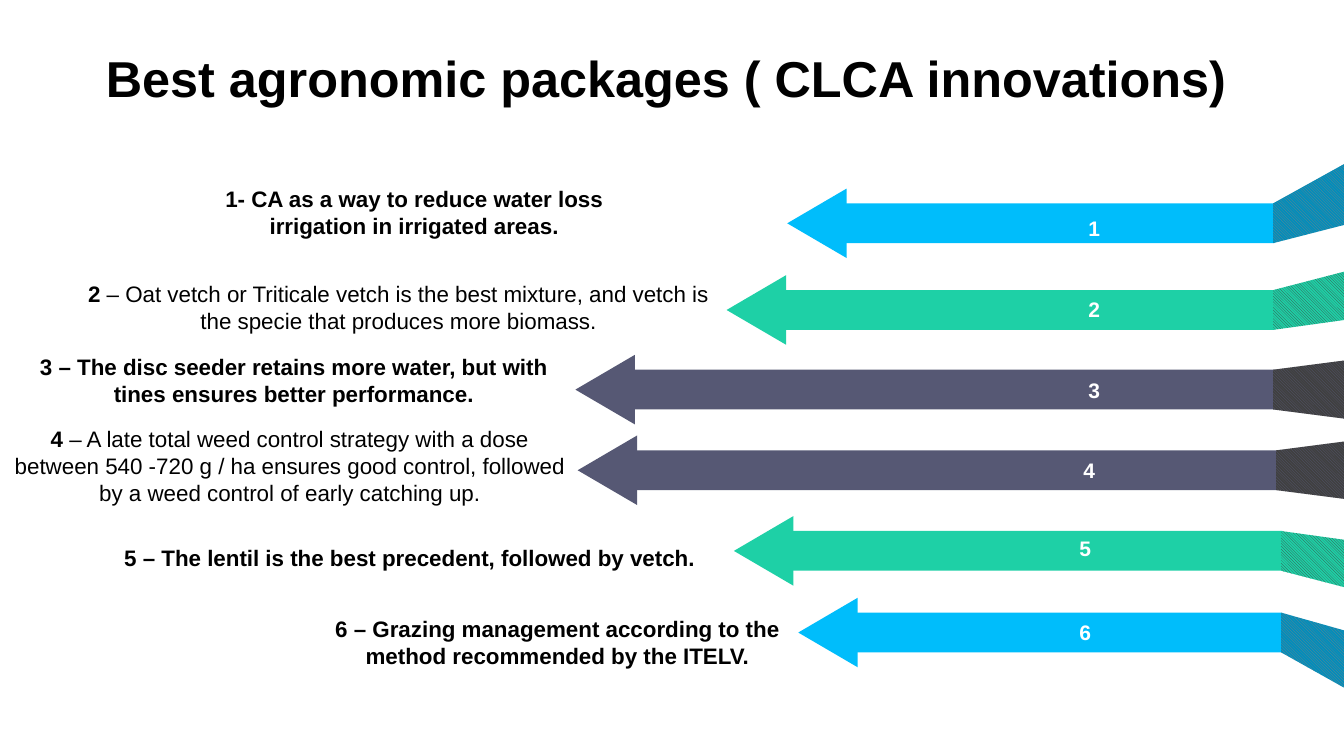
from pptx import Presentation
from pptx.dml.color import RGBColor
from pptx.enum.dml import MSO_PATTERN
from pptx.enum.shapes import MSO_SHAPE
from pptx.enum.text import MSO_ANCHOR, PP_ALIGN
from pptx.util import Pt

BLACK = RGBColor(0x00, 0x00, 0x00)
WHITE = RGBColor(0xFF, 0xFF, 0xFF)
BLUE = RGBColor(0x00, 0xBD, 0xFB)
DARK_BLUE = RGBColor(0x00, 0x8E, 0xBC)
GREEN = RGBColor(0x1E, 0xD0, 0xA6)
SLATE = RGBColor(0x56, 0x58, 0x74)
CHARCOAL = RGBColor(0x40, 0x40, 0x40)
GREY = RGBColor(0x80, 0x80, 0x80)

BAR_H = 28.4
HEAD_W, HEAD_H = 42.5, 49.7
TAIL_W = 110.2

prs = Presentation()
prs.slide_width, prs.slide_height = Pt(960), Pt(540)
s = prs.slides.add_slide(prs.slide_layouts[6])


def paint(sp, color, back=None):
    sp.shadow.inherit = False
    sp.line.fill.background()
    if back is None:
        sp.fill.solid()
        sp.fill.fore_color.rgb = color
    else:
        sp.fill.patterned()
        sp.fill.pattern = MSO_PATTERN.DARK_DOWNWARD_DIAGONAL
        sp.fill.fore_color.rgb = color
        sp.fill.back_color.rgb = back


def add_text(box, paragraphs, size, color, pad_x=9.6, pad_y=4.8):
    """Each paragraph is a list of (text, bold) runs."""
    tf = s.shapes.add_textbox(*map(Pt, box)).text_frame
    tf.word_wrap = True
    tf.margin_left = tf.margin_right = Pt(pad_x)
    tf.margin_top = tf.margin_bottom = Pt(pad_y)
    for i, runs in enumerate(paragraphs):
        p = tf.paragraphs[0] if i == 0 else tf.add_paragraph()
        p.alignment = PP_ALIGN.CENTER
        p.font.name, p.font.size = "Arial", Pt(size)
        p.font.color.rgb = color
        for text, bold in runs:
            r = p.add_run()
            r.text, r.font.bold = text, bold
    return tf


# Arrows: tip x, middle y, fold x, far top and bottom of the tail,
# bar colour, tail pattern colours, left and top of the number
arrows = [
    (562.3, 159.5, 909.4, 84.2, 145.4, BLUE, GREY, DARK_BLUE, 716.4, 154),
    (519, 221.4, 909.4, 178.6, 220.3, GREEN, CHARCOAL, GREEN, 716.4, 211.7),
    (411, 278.3, 909.4, 249.8, 306.7, SLATE, SLATE, CHARCOAL, 716.4, 269.3),
    (412.6, 335.9, 911.5, 307.4, 364.3, SLATE, SLATE, CHARCOAL, 712.8, 326.9),
    (524.2, 393.5, 915.1, 394.6, 436.3, GREEN, CHARCOAL, GREEN, 709.9, 382.3),
    (570.2, 451.8, 915.1, 468.7, 527.8, BLUE, GREY, DARK_BLUE, 709.9, 442.8),
]
for number, (tip, mid, fold, far_top, far_bottom, color, fore, back,
             num_x, num_y) in enumerate(arrows, 1):
    # Bar
    left, top, bottom = tip + HEAD_W - 0.7, mid - BAR_H / 2, mid + BAR_H / 2
    bar = s.shapes.add_shape(MSO_SHAPE.RECTANGLE, Pt(left), Pt(top),
                             Pt(fold + 1 - left), Pt(BAR_H))
    paint(bar, color)

    # Folded tail
    fb = s.shapes.build_freeform(Pt(fold), Pt(top))
    fb.add_line_segments([(Pt(fold + TAIL_W), Pt(far_top)),
                          (Pt(fold + TAIL_W), Pt(far_bottom)),
                          (Pt(fold), Pt(bottom))], close=True)
    paint(fb.convert_to_shape(), fore, back)

    # Head, a triangle turned to the left
    head = s.shapes.add_shape(MSO_SHAPE.ISOSCELES_TRIANGLE,
                              Pt(tip + (HEAD_W - HEAD_H) / 2),
                              Pt(mid - HEAD_W / 2), Pt(HEAD_H), Pt(HEAD_W))
    head.rotation = 270
    paint(head, color)

    # Number
    add_text((num_x, num_y, 130.3, 18), [[(str(number), True)]], 15, WHITE, 0, 0)

# Statements
statements = [
    ((22.3, 127.4, 547.2, 48), [
        [("1- CA as a way to reduce water loss", True)],
        [("irrigation in irrigated areas.", True)]]),
    ((44.6, 195.1, 480.2, 48), [
        [("2", True), (" – Oat vetch or Triticale vetch is the best mixture, "
                       "and vetch is the specie that produces more biomass.", False)]]),
    ((0, 247.7, 419.8, 48), [
        [("3 – The disc seeder retains more water, but with tines "
          "ensures better performance.", True)]]),
    ((0, 298.8, 414, 67.7), [
        [("4", True), (" – A late total weed control strategy with a dose "
                       "between 540 -720 g / ha ensures good control, followed "
                       "by a weed control of early catching up.", False)]]),
    ((52.6, 383.8, 480.2, 28.8), [
        [("5 – The lentil is the best precedent, followed by vetch.", True)]]),
    ((218.2, 434.9, 360, 48), [
        [("6 – Grazing management according to the method "
          "recommended by the ITELV.", True)]]),
]
for box, paragraphs in statements:
    add_text(box, paragraphs, 16, BLACK)

# Title
title = add_text((20.2, 26.6, 911.5, 56.9),
                 [[("Best agronomic packages ( CLCA innovations)", True)]], 36, BLACK)
title.vertical_anchor = MSO_ANCHOR.MIDDLE

prs.save("out.pptx")
